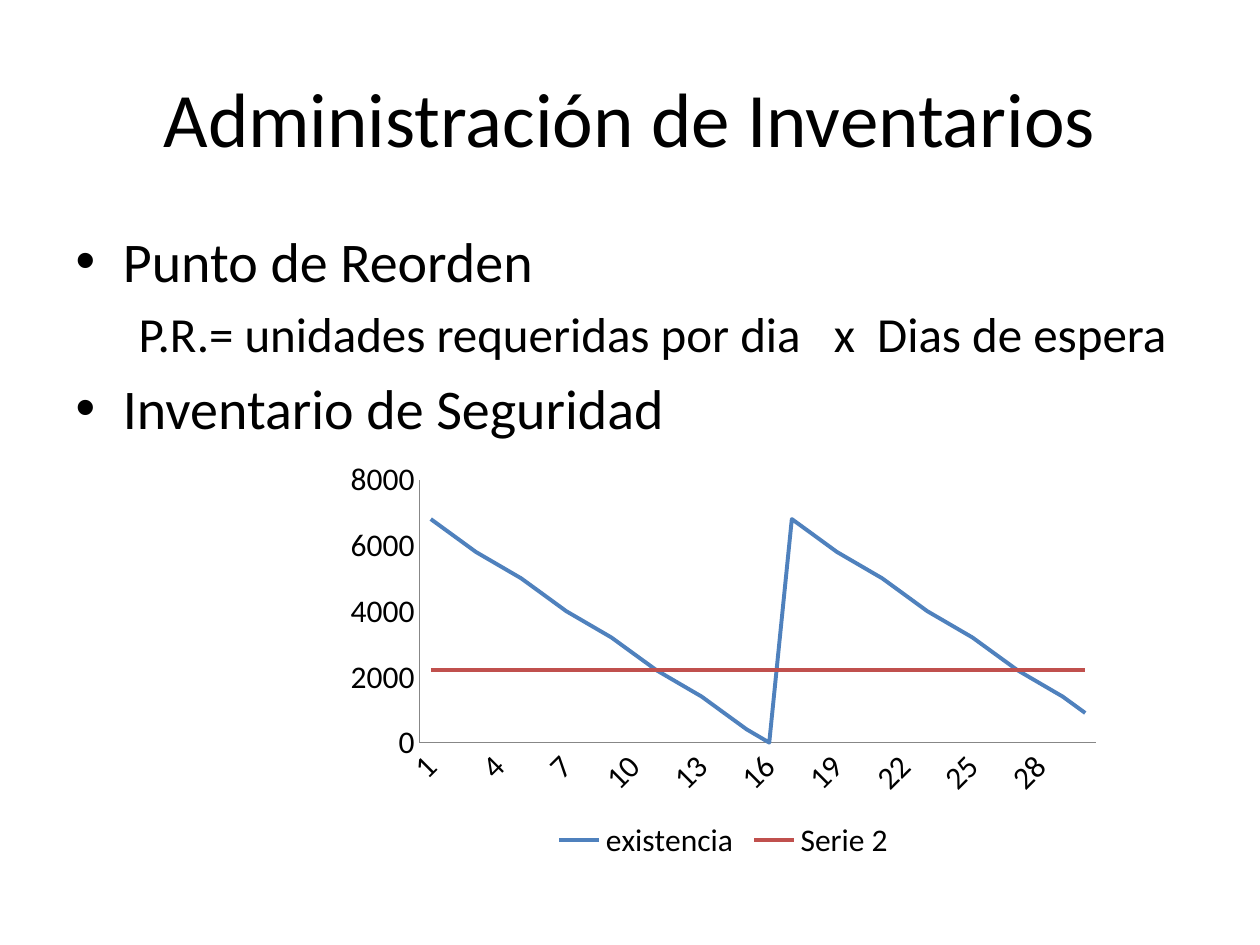
from pptx import Presentation
from pptx.chart.data import CategoryChartData
from pptx.dml.color import RGBColor
from pptx.enum.chart import XL_CHART_TYPE, XL_LEGEND_POSITION, XL_TICK_MARK
from pptx.enum.text import MSO_ANCHOR, PP_ALIGN
from pptx.oxml.xmlchemy import OxmlElement
from pptx.util import Pt

COLORS = {"text": "000000", "axis": "878787", "stock": "4F81BD", "reorder": "C0504D"}

# Inventory rule: a full stock lasts 15 days, then it is replenished
DAYS = 30
CYCLE = 16
DAILY_USE = 450
FULL_STOCK = 15 * DAILY_USE
REORDER_POINT = 5 * DAILY_USE


def color(name):
    return RGBColor.from_string(COLORS[name])


def apply(target, values):
    for name, value in values.items():
        setattr(target, name, value)


def format_font(font, size):
    apply(font, {"name": "Calibri", "size": Pt(size)})
    font.color.rgb = color("text")


def format_line(line, name, width):
    line.color.rgb = color(name)
    line.width = Pt(width)


def place(item, left, top, width, height):
    apply(item, {"left": Pt(left), "top": Pt(top),
                 "width": Pt(width), "height": Pt(height)})


def add_title(page, text):
    title = page.shapes.title
    place(title, 36, 21.6, 648, 90)
    title.text_frame.vertical_anchor = MSO_ANCHOR.MIDDLE
    para = title.text_frame.paragraphs[0]
    para.alignment = PP_ALIGN.CENTER
    span = para.add_run()
    span.text = text
    format_font(span.font, 44)


def add_list(page, items):
    body = page.placeholders[1]
    place(body, 36, 126, 648, 356.4)
    frame = body.text_frame
    for number, (text, level) in enumerate(items):
        para = frame.add_paragraph() if number else frame.paragraphs[0]
        para.level = level
        span = para.add_run()
        span.text = text
        format_font(span.font, 28 if level else 32)
        if level:  # the formula carries no bullet
            para._p.get_or_add_pPr().append(OxmlElement("a:buNone"))


def add_stock_chart(page):
    # Stock is shown to the nearest hundred
    stock = [round(FULL_STOCK - DAILY_USE * (day % CYCLE), -2) for day in range(DAYS)]
    data = CategoryChartData()
    data.categories = [str(day + 1) for day in range(DAYS)]
    data.add_series("existencia", stock)
    data.add_series("Serie 2", [round(REORDER_POINT, -2)] * DAYS)
    chart = page.shapes.add_chart(XL_CHART_TYPE.LINE, Pt(191.5), Pt(258.5),
                                  Pt(444), Pt(236), data).chart
    format_font(chart.font, 18)
    apply(chart, {"has_title": False, "has_legend": True})
    apply(chart.legend, {"position": XL_LEGEND_POSITION.BOTTOM,
                         "include_in_layout": False})

    # Axes
    for axis in (chart.category_axis, chart.value_axis):
        apply(axis, {"major_tick_mark": XL_TICK_MARK.NONE,
                     "minor_tick_mark": XL_TICK_MARK.NONE,
                     "has_major_gridlines": False})
        format_line(axis.format.line, "axis", 0.75)
    apply(chart.value_axis, {"minimum_scale": 0, "maximum_scale": 8000,
                             "major_unit": 2000})

    # Lines
    for series, name in zip(chart.plots[0].series, ("stock", "reorder")):
        series.smooth = False
        format_line(series.format.line, name, 2.25)


def main():
    deck = Presentation()
    apply(deck, {"slide_width": Pt(720), "slide_height": Pt(540)})
    page = deck.slides.add_slide(deck.slide_layouts[1])
    add_title(page, "Administración de Inventarios")
    add_list(page, [
        ("Punto de Reorden", 0),
        ("P.R.= unidades requeridas por dia   x  Dias de espera", 1),
        ("Inventario de Seguridad", 0),
    ])
    add_stock_chart(page)
    deck.save("out.pptx")


if __name__ == "__main__":
    main()
